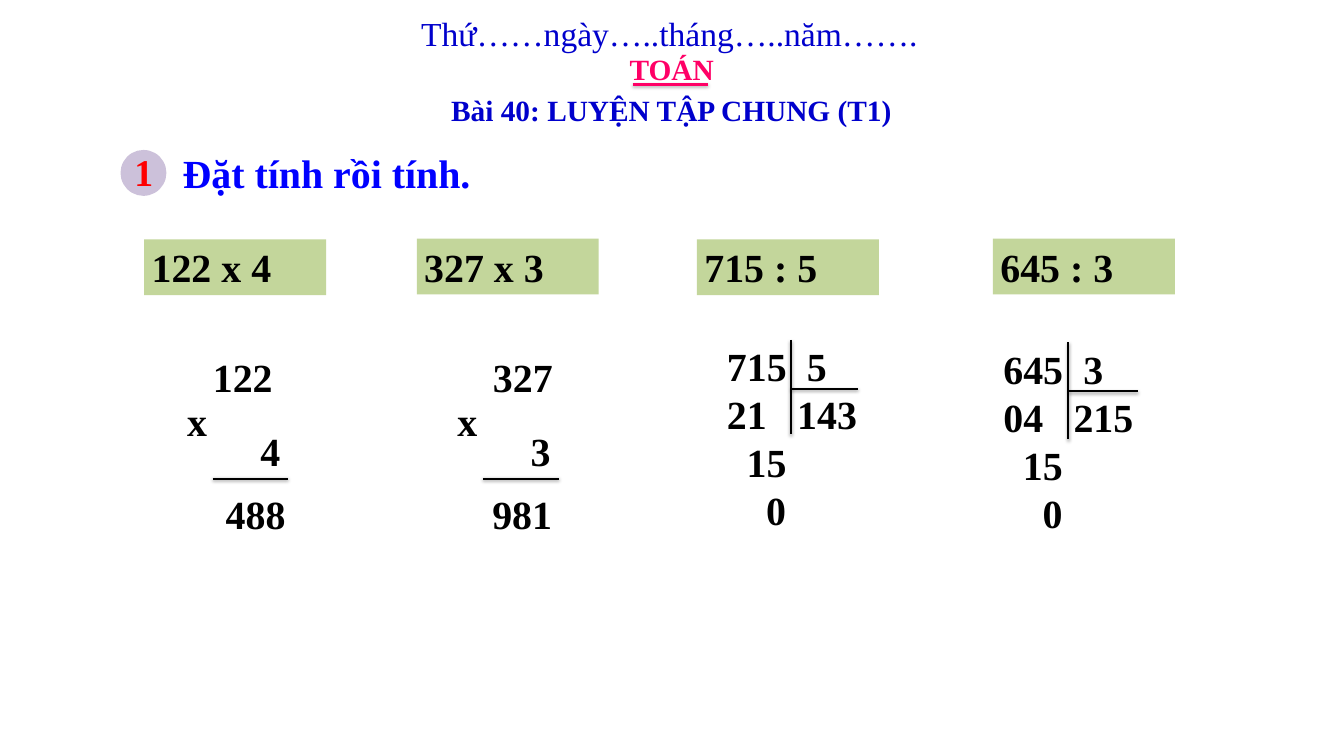
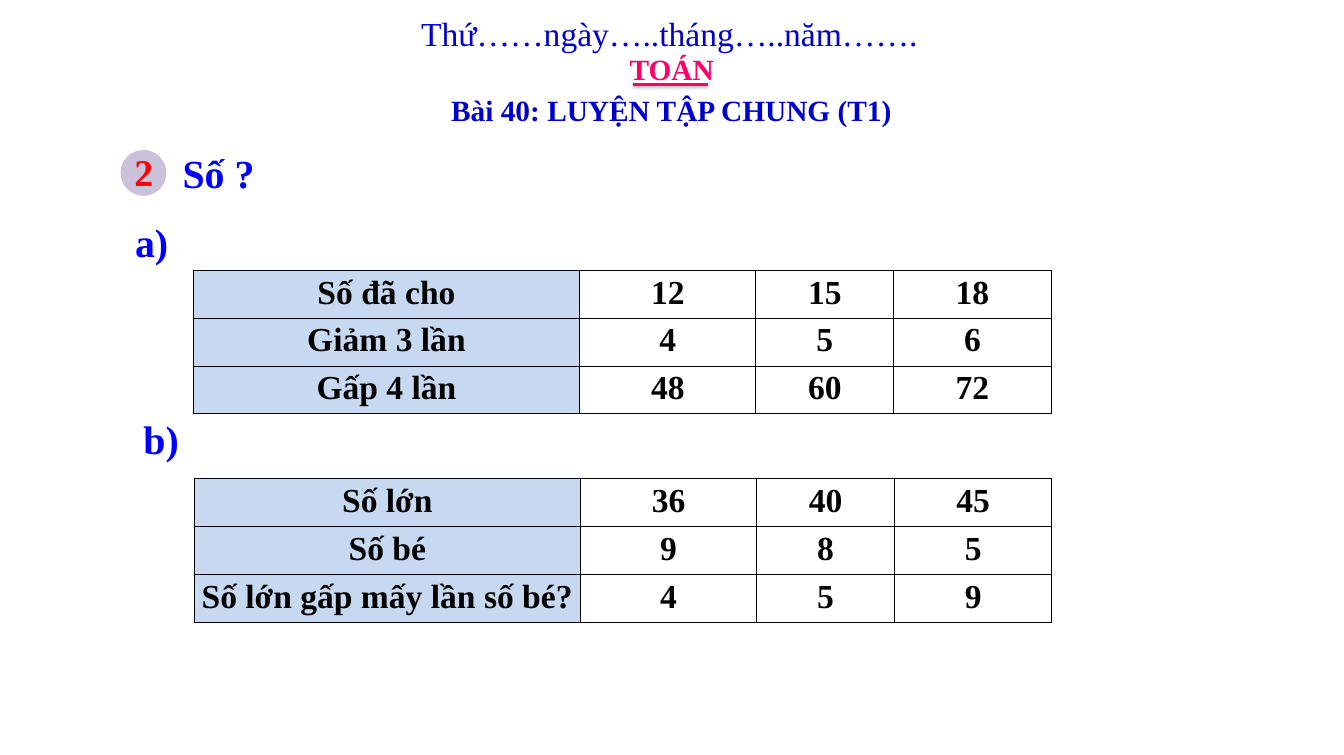
from lxml import etree
from pptx import Presentation
from pptx.dml.color import RGBColor
from pptx.enum import shapes, text
from pptx.oxml import ns
from pptx.util import Inches, Pt

FONT = "Times New Roman"
BLACK = RGBColor(0x00, 0x00, 0x00)
WHITE = RGBColor(0xFF, 0xFF, 0xFF)
NAVY = RGBColor(0x00, 0x00, 0xCC)
BLUE = RGBColor(0x00, 0x00, 0xFF)
PINK = RGBColor(0xFF, 0x00, 0x66)
RED = RGBColor(0xFF, 0x00, 0x00)
LILAC = RGBColor(0xCC, 0xC1, 0xDA)
GREEN = RGBColor(0xC3, 0xD6, 0x9B)
PALE_BLUE = RGBColor(0xC6, 0xD9, 0xF1)

LEFT, CENTER = text.PP_ALIGN.LEFT, text.PP_ALIGN.CENTER
RIGHT, JUSTIFY = text.PP_ALIGN.RIGHT, text.PP_ALIGN.JUSTIFY

DATE_LINE = "Thứ……ngày…..tháng…..năm……."
SUBJECT = "TOÁN"
LESSON = "Bài 40: LUYỆN TẬP CHUNG (T1)"

# (expression, left, top)
EXPRESSIONS = [("122 x 4", 1.91, 3.17), ("327 x 3", 5.52, 3.16),
               ("715 : 5", 9.23, 3.17), ("645 : 3", 13.15, 3.16)]

# rule_left: start of the line; the *_right values are right edges of the boxes
MULTIPLICATIONS = [
    dict(rule_left=2.82, factor="122", factor_right=3.71, by="4",
         product="488", product_right=3.88),
    dict(rule_left=6.40, factor="327", factor_right=7.42, by="3",
         product="981", product_right=7.41),
]

# steps: (digits of indent, remainder)
DIVISIONS = [
    dict(left=8.61, top=4.48, dividend="715", divisor="5", quotient="143",
         steps=[(0, "21"), (1, "15"), (2, "0")],
         bar=(10.48, 4.50, 5.75), rule=(5.15, 11.36)),
    dict(left=12.27, top=4.52, dividend="645", divisor="3", quotient="215",
         steps=[(0, "04"), (1, "15"), (2, "0")],
         bar=(14.15, 4.53, 5.82), rule=(5.18, 15.07)),
]

COLUMN_WIDTHS = [5.12, 2.33, 1.83, 2.08]
ROW_HEIGHT = 0.63
# (label, label box, table left, table top, rows)
NUMBER_TABLES = [
    ("a)", (1.69, 2.84, 0.65, 0.74), 2.56, 3.58,
     [("Số đã cho", "12", "15", "18"),
      ("Giảm 3 lần", "4", "5", "6"),
      ("Gấp 4 lần", "48", "60", "72")]),
    ("b)", (1.80, 5.44, 0.68, 0.74), 2.57, 6.34,
     [("Số lớn", "36", "40", "45"),
      ("Số bé", "9", "8", "5"),
      ("Số lớn gấp mấy lần số bé?", "4", "5", "9")]),
]


def write(paragraph, words, size, color, bold=True, align=LEFT):
    paragraph.alignment = align
    run = paragraph.add_run()
    run.text = words
    run.font.name, run.font.size, run.font.bold = FONT, Pt(size), bold
    run.font.color.rgb = color


def add_label(slide, box, words, size, color, bold=True, align=LEFT, fill=None):
    """Text box; a filled one wraps, a bare one does not."""
    label = slide.shapes.add_textbox(*map(Inches, box))
    frame = label.text_frame
    frame.word_wrap = fill is not None
    frame.auto_size = text.MSO_AUTO_SIZE.SHAPE_TO_FIT_TEXT
    if fill is not None:
        label.fill.solid()
        label.fill.fore_color.rgb = fill
    write(frame.paragraphs[0], words, size, color, bold, align)


def add_line(slide, start, end, color=BLACK):
    """Straight line that keeps the soft shadow of the theme."""
    line = slide.shapes.add_connector(shapes.MSO_CONNECTOR.STRAIGHT,
                                      *map(Inches, start + end))
    line.line.color.rgb = color
    line.line.width = Pt(2)


def add_exercise_slide(prs, number, task, task_width):
    slide = prs.slides.add_slide(prs.slide_layouts[5])
    lesson = slide.shapes.title
    lesson.left, lesson.top, lesson.width, lesson.height = map(
        Inches, (5.05, 1.14, 7.68, 0.63))
    frame = lesson.text_frame
    frame.margin_left = frame.margin_right = Inches(0.16)
    frame.margin_top = frame.margin_bottom = Inches(0.08)
    frame.vertical_anchor = text.MSO_ANCHOR.TOP
    frame.auto_size = text.MSO_AUTO_SIZE.SHAPE_TO_FIT_TEXT
    write(frame.paragraphs[0], LESSON, 28, NAVY, align=CENTER)

    add_label(slide, (5.48, 0.12, 6.84, 0.64), DATE_LINE, 32, NAVY, bold=False)
    add_label(slide, (8.24, 0.63, 1.33, 0.57), SUBJECT, 28, PINK)
    add_line(slide, (8.38, 1.12), (9.38, 1.12), PINK)

    badge = slide.shapes.add_shape(shapes.MSO_SHAPE.OVAL,
                                   *map(Inches, (1.61, 2, 0.58, 0.58)))
    badge.shadow.inherit = False
    badge.fill.solid()
    badge.fill.fore_color.rgb = badge.line.color.rgb = LILAC
    badge.line.width = Pt(2)
    add_label(slide, (1.68, 1.92, 0.45, 0.71), number, 36, RED)
    add_label(slide, (2.32, 1.92, task_width, 0.74), task, 38, BLUE)
    return slide


def add_multiplication(slide, rule_left, factor, factor_right, by,
                       product, product_right):
    cells = [(product, product_right - 1.12, 6.44, 1.12, RIGHT),
             (by, rule_left + 0.53, 5.60, 0.49, JUSTIFY),
             (factor, factor_right - 1.21, 4.62, 1.21, RIGHT),
             ("x", rule_left - 0.44, 5.21, 0.49, JUSTIFY)]
    for words, left, top, width, align in cells:
        add_label(slide, (left, top, width, 0.74), words, 38, BLACK,
                  align=align, fill=WHITE)
    add_line(slide, (rule_left, 6.34), (rule_left + 1, 6.34))


def add_tab_stops(paragraph, stops):
    properties = paragraph._p.get_or_add_pPr()
    tab_list = etree.SubElement(properties, ns.qn("a:tabLst"))
    for stop in stops:
        etree.SubElement(tab_list, ns.qn("a:tab"), pos=str(Inches(stop)), algn="l")


def add_division(slide, left, top, dividend, divisor, quotient, steps, bar, rule):
    first_digit, digit_width = 0.92, 0.26
    work = slide.shapes.add_textbox(*map(Inches, (left, top, 3.13, 2.66)))
    work.fill.solid()
    work.fill.fore_color.rgb = WHITE
    frame = work.text_frame
    frame.word_wrap = True
    rows = [(0, dividend)] + steps
    right_side = {0: (1.98, divisor), 1: (1.85, quotient)}
    for index, (indent, digits) in enumerate(rows):
        paragraph = frame.add_paragraph() if index else frame.paragraphs[0]
        stops, words = [first_digit + indent * digit_width], "\t" + digits
        if index in right_side:
            stop, answer = right_side[index]
            stops.append(stop)
            words += "\t" + answer
        add_tab_stops(paragraph, stops)
        write(paragraph, words, 38, BLACK)
    bar_x, bar_top, bar_bottom = bar
    rule_y, rule_right = rule
    add_line(slide, (bar_x, bar_top), (bar_x, bar_bottom))
    add_line(slide, (bar_x, rule_y), (rule_right, rule_y))


def border(cell):
    properties = cell._tc.get_or_add_tcPr()
    for position, side in enumerate(("a:lnL", "a:lnR", "a:lnT", "a:lnB")):
        edge = etree.Element(ns.qn(side), w=str(Pt(1)))
        solid = etree.SubElement(edge, ns.qn("a:solidFill"))
        etree.SubElement(solid, ns.qn("a:srgbClr"), val=str(BLACK))
        properties.insert(position, edge)


def add_number_table(slide, left, top, rows):
    table = slide.shapes.add_table(
        len(rows), len(COLUMN_WIDTHS), Inches(left), Inches(top),
        Inches(sum(COLUMN_WIDTHS)), Inches(ROW_HEIGHT * len(rows))).table
    table.first_row = table.horz_banding = False
    for column, width in zip(table.columns, COLUMN_WIDTHS):
        column.width = Inches(width)
    for r, row in enumerate(rows):
        for c, words in enumerate(row):
            cell = table.cell(r, c)
            cell.fill.solid()
            cell.fill.fore_color.rgb = WHITE if c else PALE_BLUE
            border(cell)
            write(cell.text_frame.paragraphs[0], words, 32, BLACK, align=CENTER)


def main():
    prs = Presentation()
    prs.slide_width, prs.slide_height = Inches(17.8), Inches(10)

    slide = add_exercise_slide(prs, "1", "Đặt tính rồi tính.", 4.05)
    for expression, left, top in EXPRESSIONS:
        add_label(slide, (left, top, 2.41, 0.74), expression, 38, BLACK,
                  align=JUSTIFY, fill=GREEN)
    for division in DIVISIONS:
        add_division(slide, **division)
    for multiplication in MULTIPLICATIONS:
        add_multiplication(slide, **multiplication)

    slide = add_exercise_slide(prs, "2", "Số ?", 1.16)
    for label, label_box, left, top, rows in NUMBER_TABLES:
        add_number_table(slide, left, top, rows)
        add_label(slide, label_box, label, 38, BLUE)

    prs.save("out.pptx")


if __name__ == "__main__":
    main()
